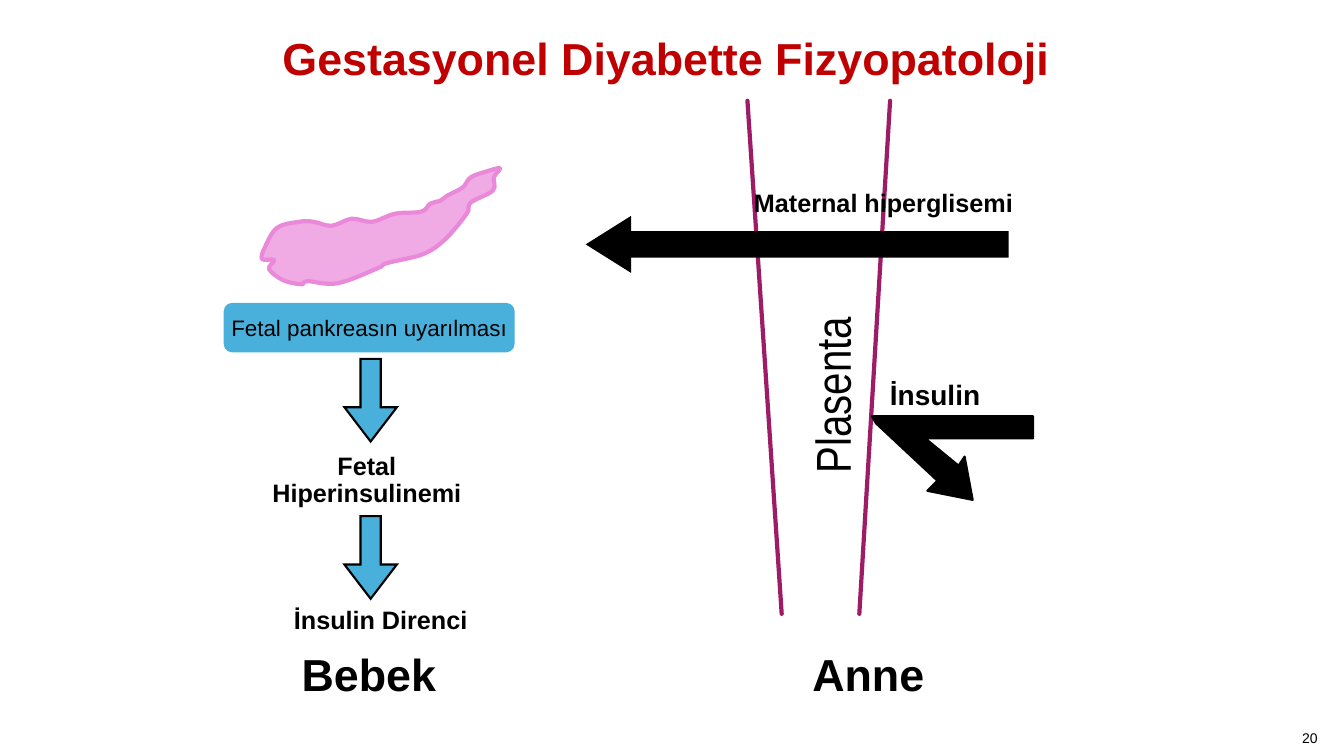
from lxml import etree
from pptx import Presentation, util as u
from pptx.dml.color import RGBColor
from pptx.enum import shapes as kinds, text as t
from pptx.oxml.ns import qn

BLACK = RGBColor(0x00, 0x00, 0x00)
RED = RGBColor(0xC0, 0x00, 0x00)
BLUE = RGBColor(0x48, 0xB0, 0xDA)
PINK = RGBColor(0xEA, 0x88, 0xDA)
PLUM = RGBColor(0x9E, 0x1C, 0x66)

COLUMNS, ROWS = 133.33, 75
CELL = u.Inches(0.1)
CENTER, LEFT = t.PP_ALIGN.CENTER, t.PP_ALIGN.LEFT
TOP, MIDDLE = t.MSO_ANCHOR.TOP, t.MSO_ANCHOR.MIDDLE

PANCREAS = [
    (49.6, 16.7), (48.3, 17), (46.7, 17.6), (45.9, 18.6), (44.4, 19.4),
    (43.7, 19.9), (42.7, 20.2), (41.8, 21), (39.2, 21.2), (36.9, 22),
    (34.9, 21.7), (32.9, 22.4), (31.1, 22), (29.7, 22), (27.5, 22.6),
    (26.3, 24.5), (26, 25.7), (27.2, 25.8), (26.7, 26.7), (28.1, 27.8),
    (29.9, 28.2), (30.5, 27.9), (33.5, 28.1), (37.5, 26.6), (38.4, 26.1),
    (42, 25.2), (44.2, 23.7), (46.3, 21.2), (46.7, 20.1), (48.9, 18.9),
    (49, 17.6),
]
INSULIN_BOUNCE = [
    (91.8, 43.5), (102.5, 43.5), (102.5, 41.3), (86.5, 41.3), (86.9, 42),
    (93, 47.7), (92, 48.7), (96.5, 49.6), (95.7, 45.3), (95.1, 46.2),
]


def cells(*counts):
    return [round(count * CELL) for count in counts]


def paint(shape, fill, outline=None, weight=1.5):
    shape.shadow.inherit = False
    shape.fill.solid()
    shape.fill.fore_color.rgb = fill
    if outline is None:
        shape.line.fill.background()
    else:
        shape.line.color.rgb = outline
        shape.line.width = u.Pt(weight)


def write(frame, lines, size, color=BLACK, bold=True, font="Arial", align=CENTER,
          anchor=TOP, wrap=True, spacing=None, indent=0):
    frame.word_wrap = wrap
    frame.vertical_anchor = anchor
    for i, line in enumerate(lines):
        paragraph = frame.add_paragraph() if i else frame.paragraphs[0]
        paragraph.alignment = align
        if spacing:
            paragraph.line_spacing = spacing
        if indent:
            paragraph._p.get_or_add_pPr().set("marL", str(cells(indent)[0]))
        run = paragraph.add_run()
        run.text = line
        run.font.name = font
        run.font.size = u.Pt(size)
        run.font.bold = bold
        run.font.color.rgb = color


def add_label(slide, box, lines, size, rotation=0, **style):
    label = slide.shapes.add_textbox(*cells(*box))
    label.rotation = rotation
    write(label.text_frame, lines, size, **style)


def add_arrow(slide, box, fill, adjustments, rotation=0):
    arrow = slide.shapes.add_shape(kinds.MSO_SHAPE.LEFT_ARROW, *cells(*box))
    arrow.rotation = rotation
    for i, value in enumerate(adjustments):
        arrow.adjustments[i] = value
    paint(arrow, fill, BLACK)
    outline = arrow._element.spPr.find(qn("a:ln"))
    etree.SubElement(outline, qn("a:miter")).set("lim", "800000")


def add_outline(slide, points, fill, outline, weight=1.5):
    start, *rest = [tuple(cells(*point)) for point in points]
    builder = slide.shapes.build_freeform(*start)
    builder.add_line_segments(rest + [start], close=True)
    drawn = builder.convert_to_shape()
    paint(drawn, fill, outline, weight)
    return drawn


def round_corners(drawn):
    segments = list(drawn._element.iter(qn("a:lnTo")))
    ends = [(int(s[0].get("x")), int(s[0].get("y"))) for s in segments]
    for i, segment in enumerate(segments):
        before, start, end, after = (ends[(i + k) % len(ends)] for k in (-2, -1, 0, 1))
        leaving = [b + (c - a) / 6 for a, b, c in zip(before, start, end)]
        arriving = [c - (d - b) / 6 for b, c, d in zip(start, end, after)]
        curve = etree.Element(qn("a:cubicBezTo"))
        for x, y in (leaving, arriving, end):
            etree.SubElement(curve, qn("a:pt"), x=str(round(x)), y=str(round(y)))
        segment.getparent().replace(segment, curve)


def add_placenta_wall(slide, top_column, bottom_column):
    wall = slide.shapes.add_connector(
        kinds.MSO_CONNECTOR.STRAIGHT, *cells(top_column, 10, bottom_column, 60.9))
    wall.line.color.rgb = PLUM
    wall.line.width = u.Pt(3)
    properties = wall._element.spPr
    properties.find(qn("a:ln")).set("cap", "rnd")
    etree.SubElement(properties, qn("a:effectLst"))


def add_baby_side(slide):
    pancreas = add_outline(slide, PANCREAS, PINK, PINK, 3)
    round_corners(pancreas)
    tint = pancreas._element.spPr.find(qn("a:solidFill"))[0]
    etree.SubElement(tint, qn("a:alpha")).set("val", "70000")

    stimulation = slide.shapes.add_shape(
        kinds.MSO_SHAPE.ROUNDED_RECTANGLE, *cells(22.2, 30.05, 28.85, 4.9))
    paint(stimulation, BLUE)
    write(stimulation.text_frame, ["Fetal pankreasın uyarılması"], 16,
          bold=False, anchor=MIDDLE, wrap=False)
    for row in (37.1, 52.7):
        add_arrow(slide, (32.67, row, 8.2, 5.2), BLUE, [0.385, 0.654], rotation=270)
    add_label(slide, (21.1, 44.5, 30.6, 6.4), ["Fetal", "Hiperinsulinemi"], 18, spacing=0.9)
    add_label(slide, (26.1, 59.45, 21.3, 4), ["İnsulin Direnci"], 18,
              align=LEFT, wrap=False, indent=2.08)
    add_label(slide, (27.2, 63.7, 18.8, 6.3), ["Bebek"], 32)


def add_mother_side(slide):
    add_label(slide, (79.6, 63.7, 22.5, 6.3), ["Anne"], 32, align=LEFT)
    add_placenta_wall(slide, 74.15, 77.55)
    add_placenta_wall(slide, 88.3, 85.25)
    add_label(slide, (71.3, 34, 21.7, 6.2), ["Plasenta"], 35, rotation=270,
              bold=False, font="Arial Narrow", align=LEFT)
    add_label(slide, (87.3, 36.95, 17.1, 4.3), ["İnsulin"], 20, align=LEFT)
    add_outline(slide, INSULIN_BOUNCE, BLACK, BLACK)
    add_arrow(slide, (58.3, 21.6, 41.65, 5.3), BLACK, [0.458, 0.796])
    add_label(slide, (71.9, 18.1, 29.6, 4), ["Maternal hiperglisemi"], 18,
              wrap=False, indent=1.9)


def main():
    deck = Presentation()
    deck.slide_width, deck.slide_height = cells(COLUMNS, ROWS)
    slide = deck.slides.add_slide(deck.slide_layouts[6])
    add_label(slide, (121.6, 71.85, 16.7, 2.7), ["20"], 10, bold=False, anchor=MIDDLE)
    add_label(slide, (14.8, -1.1, 102.6, 14.3), ["Gestasyonel Diyabette Fizyopatoloji"],
              32, color=RED, anchor=MIDDLE, spacing=0.9)
    add_baby_side(slide)
    add_mother_side(slide)
    deck.save("out.pptx")


if __name__ == "__main__":
    main()
